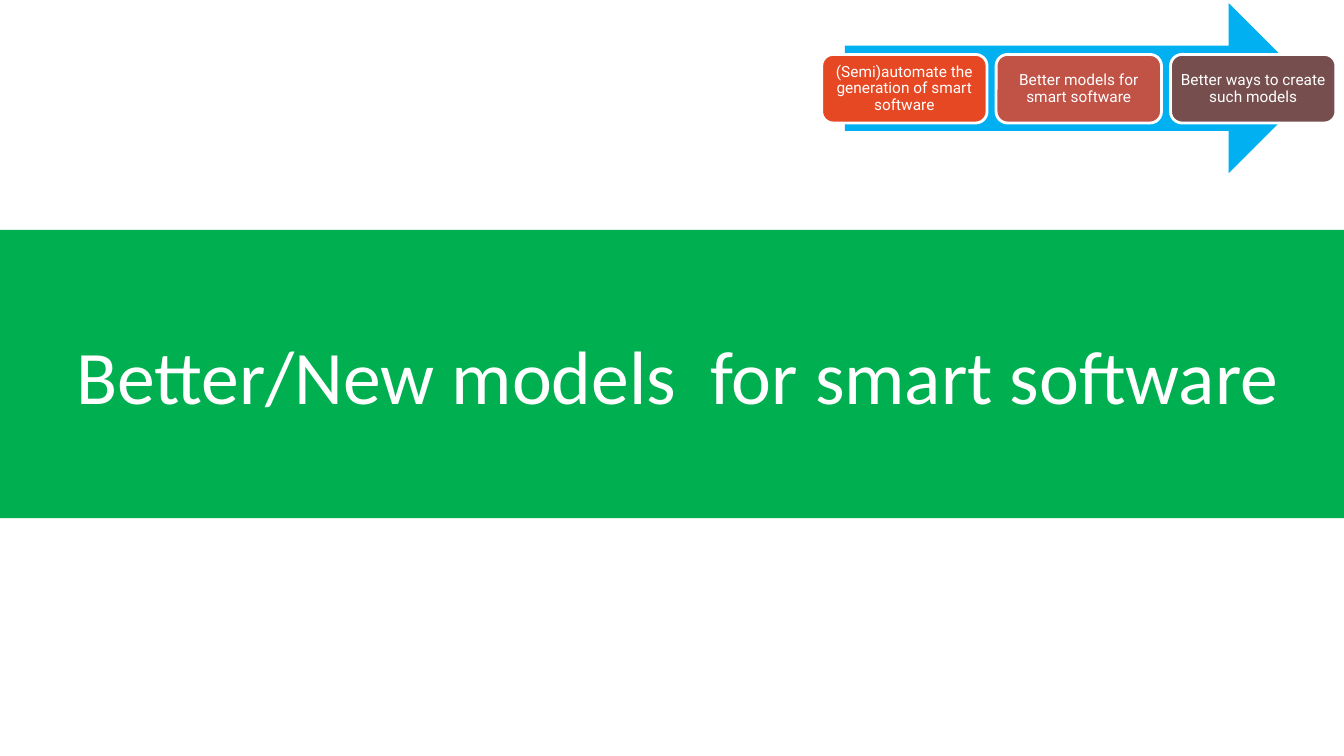
import pptx
import pptx.util
import pptx.dml.color
import pptx.enum.shapes
import pptx.enum.text

Inches = pptx.util.Inches
Pt = pptx.util.Pt
SHAPES = pptx.enum.shapes.MSO_SHAPE
ANCHORS = pptx.enum.text.MSO_ANCHOR

COLOURS = {
    "white": "FFFFFF",
    "banner": "00B050",
    "arrow": "00B0F0",
    "orange": "E64823",
    "red": "C15246",
    "brown": "764E4E",
}

STEPS = [
    ("(Semi)automate the generation of smart software", "orange"),
    ("Better models for smart software", "red"),
    ("Better ways to create such models", "brown"),
]
STEP_LEFT = 8.15
STEP_PITCH = 1.73


def colour(name):
    return pptx.dml.color.RGBColor.from_string(COLOURS[name])


def add_block(page, preset, left, top, width, height, fill):
    block = page.shapes.add_shape(
        preset, Inches(left), Inches(top), Inches(width), Inches(height))
    block.shadow.inherit = False
    block.fill.solid()
    block.fill.fore_color.rgb = colour(fill)
    block.line.fill.background()
    return block


def write_text(box, text, font, size, anchor, inset, line_spacing=1.0):
    frame = box.text_frame
    frame.word_wrap = True
    frame.vertical_anchor = anchor
    frame.margin_left = frame.margin_right = Inches(inset)
    frame.margin_top = frame.margin_bottom = Inches(inset)
    para = frame.paragraphs[0]
    para.alignment = pptx.enum.text.PP_ALIGN.CENTER
    para.line_spacing = line_spacing
    span = para.add_run()
    span.text = text
    span.font.name = font
    span.font.size = Pt(size)
    span.font.color.rgb = colour("white")


def add_title(page, text):
    box = page.shapes.add_textbox(
        Inches(0.36), Inches(2.57), Inches(12.72), Inches(1.69))
    write_text(box, text, "Calibri", 54, ANCHORS.BOTTOM, 0.1)


def add_step(page, left, text, fill):
    step = add_block(page, SHAPES.ROUNDED_RECTANGLE, left, 0.54, 1.64, 0.68, fill)
    step.line.color.rgb = colour("white")
    step.line.width = Pt(2)
    write_text(step, text, "Roboto", 11, ANCHORS.MIDDLE, 0.05, 0.9)


def main():
    deck = pptx.Presentation()
    deck.slide_width = Inches(13.33)
    deck.slide_height = Inches(7.5)
    page = deck.slides.add_slide(deck.slide_layouts[6])

    add_block(page, SHAPES.RECTANGLE, 0, 2.28, 13.33, 2.86, "banner")
    add_title(page, "Better/New models  for smart software")

    add_block(page, SHAPES.RIGHT_ARROW, 8.38, 0.03, 4.65, 1.69, "arrow")
    for index, (text, fill) in enumerate(STEPS):
        add_step(page, STEP_LEFT + index * STEP_PITCH, text, fill)

    deck.save("out.pptx")


if __name__ == "__main__":
    main()
